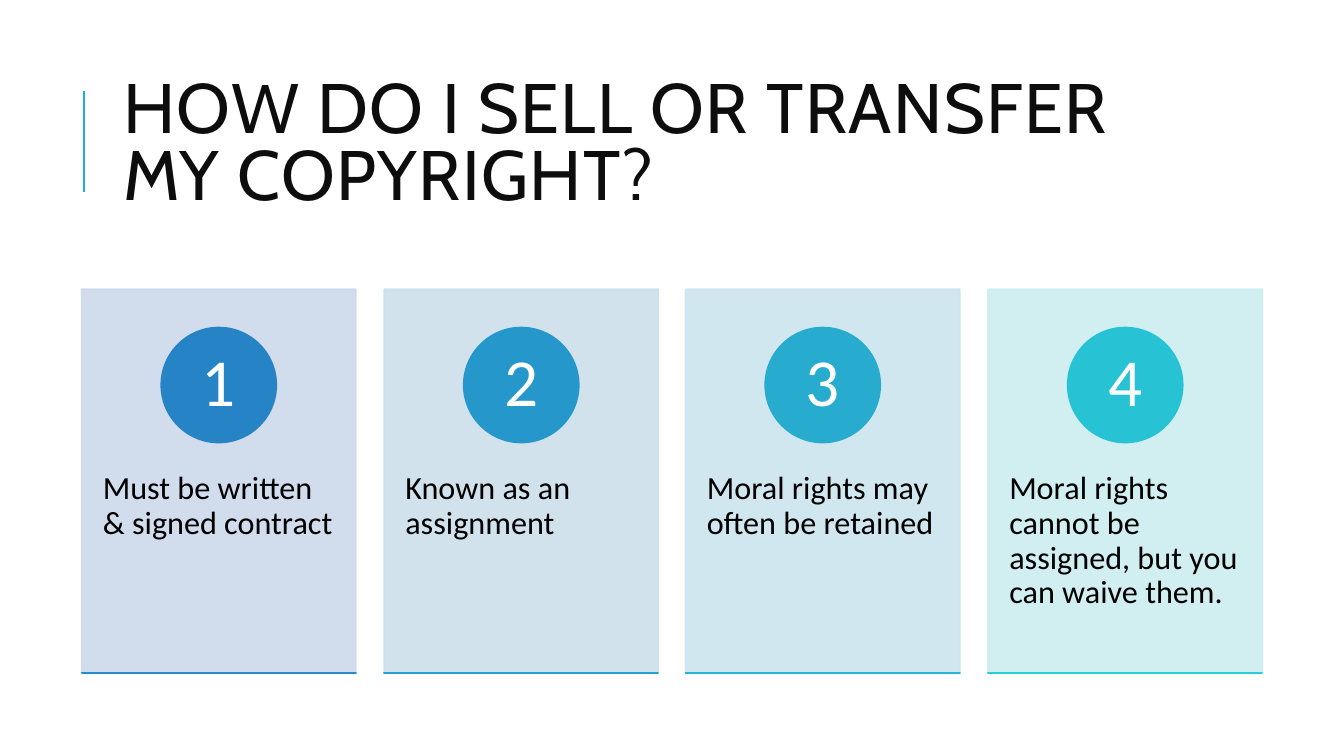
from dataclasses import dataclass

from lxml import etree
from pptx import Presentation
from pptx.dml.color import RGBColor
from pptx.enum import shapes, text
from pptx.oxml import ns
from pptx.util import Emu, Pt

PX = 9144  # EMU per px, 100 px to the inch

WHITE = RGBColor(0xFF, 0xFF, 0xFF)
BLACK = RGBColor(0x00, 0x00, 0x00)
TITLE_INK = RGBColor(0x0D, 0x0D, 0x0D)
ACCENT = RGBColor(0x1C, 0xAD, 0xE4)

FIRST_LEFT, LAST_LEFT = 81, 980
CARD_TOP, CARD_WIDTH, CARD_HEIGHT = 287, 272, 381
CIRCLE_TOP, CIRCLE_SIZE = 325, 114
LABEL_TOP, LABEL_HEIGHT = 432, 229


@dataclass(frozen=True)
class Card:
    label: str
    panel: RGBColor
    circle: RGBColor
    rule: RGBColor


CARDS = [
    Card("Must be written & signed contract", RGBColor(0xCD, 0xD9, 0xEA),
         RGBColor(0x26, 0x83, 0xC6), RGBColor(0x26, 0x8D, 0xC8)),
    Card("Known as an assignment", RGBColor(0xCD, 0xDF, 0xEC),
         RGBColor(0x26, 0x97, 0xCB), RGBColor(0x26, 0xA2, 0xCD)),
    Card("Moral rights may often be retained", RGBColor(0xCD, 0xE5, 0xEE),
         RGBColor(0x27, 0xAC, 0xD0), RGBColor(0x27, 0xB7, 0xD2)),
    Card("Moral rights cannot be assigned, but you can waive them.",
         RGBColor(0xCD, 0xED, 0xF0),
         RGBColor(0x27, 0xC3, 0xD5), RGBColor(0x27, 0xCE, 0xD7)),
]


def px(*lengths: int) -> list[Emu]:
    return [Emu(length * PX) for length in lengths]


def add_block(page, kind, frame: tuple[int, int, int, int], color: RGBColor):
    """Add a shape whose fill and outline share one colour."""
    shape = page.shapes.add_shape(kind, *px(*frame))
    shape.shadow.inherit = False
    shape.fill.solid()
    shape.fill.fore_color.rgb = color
    shape.line.color.rgb = color
    shape.line.width = Pt(1.25)
    return shape


def set_opacity(shape, percent: int) -> None:
    for color in shape.element.spPr.iter(ns.qn("a:srgbClr")):
        etree.SubElement(color, ns.qn("a:alpha"), val=str(percent * 1000))


def write(box, words: str, size: int, color: RGBColor, align, anchor,
          insets: tuple[int, int], font: str = "Calibri", spacing: float = 0.9):
    frame = box.text_frame
    frame.text = words
    frame.word_wrap = True
    frame.auto_size = text.MSO_AUTO_SIZE.NONE
    frame.vertical_anchor = anchor
    frame.margin_left, frame.margin_top = px(*insets)
    frame.margin_right, frame.margin_bottom = px(*insets)
    para = frame.paragraphs[0]
    para.alignment = align
    para.line_spacing = spacing
    span = para.runs[0]
    span.font.name = font
    span.font.size = Pt(size)
    span.font.color.rgb = color
    return span


def add_title(page) -> None:
    title = page.shapes.title
    title.left, title.top, title.width, title.height = px(112, 64, 1063, 164)
    span = write(title, "HOW DO I SELL OR TRANSFER MY COPYRIGHT?", 50, TITLE_INK,
                 text.PP_ALIGN.LEFT, text.MSO_ANCHOR.MIDDLE, (10, 5), "Cabin", 0.8)
    span.font._element.set("spc", "100")

    # Accent line beside the title
    accent = page.shapes.add_connector(shapes.MSO_CONNECTOR.STRAIGHT,
                                       *px(83, 190, 83, 90))
    accent.line.color.rgb = ACCENT
    accent.line.width = Pt(1.5)
    etree.SubElement(accent.element.spPr, ns.qn("a:effectLst"))


def add_card(page, card: Card, number: int, left: int) -> None:
    # Panel and its label
    panel = add_block(page, shapes.MSO_SHAPE.RECTANGLE,
                      (left, CARD_TOP, CARD_WIDTH, CARD_HEIGHT), card.panel)
    set_opacity(panel, 90)
    label = page.shapes.add_textbox(*px(left, LABEL_TOP, CARD_WIDTH, LABEL_HEIGHT))
    write(label, card.label, 23, BLACK,
          text.PP_ALIGN.LEFT, text.MSO_ANCHOR.TOP, (21, 36))

    # Numbered circle
    circle_left = left + (CARD_WIDTH - CIRCLE_SIZE) // 2
    circle = add_block(page, shapes.MSO_SHAPE.OVAL,
                       (circle_left, CIRCLE_TOP, CIRCLE_SIZE, CIRCLE_SIZE), card.circle)
    write(circle, str(number), 48, WHITE,
          text.PP_ALIGN.CENTER, text.MSO_ANCHOR.MIDDLE, (9, 1))

    # Rule along the bottom edge
    add_block(page, shapes.MSO_SHAPE.RECTANGLE,
              (left, CARD_TOP + CARD_HEIGHT, CARD_WIDTH, 0), card.rule)


def main() -> None:
    deck = Presentation()
    deck.slide_width, deck.slide_height = px(1333, 750)
    page = deck.slides.add_slide(deck.slide_layouts[5])
    add_title(page)
    pitch = (LAST_LEFT - FIRST_LEFT) / (len(CARDS) - 1)
    for index, card in enumerate(CARDS):
        add_card(page, card, index + 1, round(FIRST_LEFT + index * pitch))
    deck.save("out.pptx")


if __name__ == "__main__":
    main()
